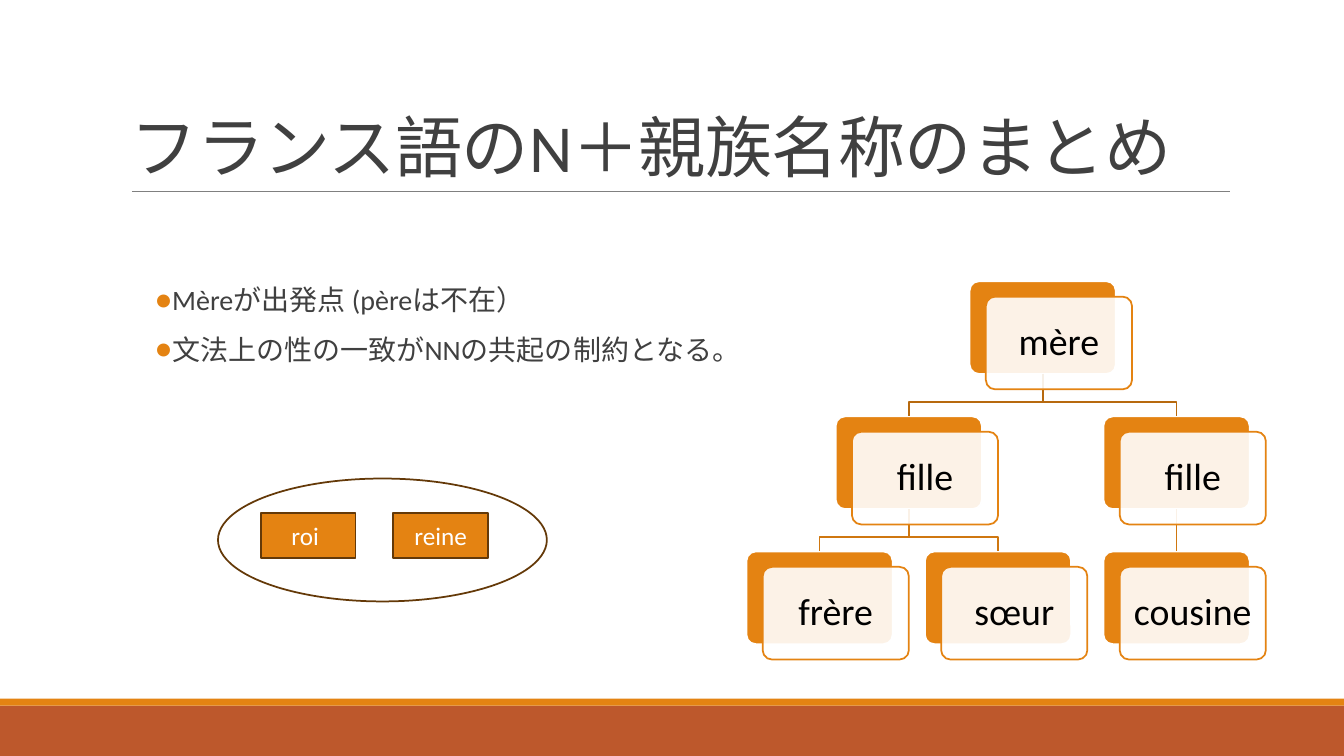
from dataclasses import dataclass

from lxml import etree
from pptx import Presentation
from pptx.dml.color import RGBColor
from pptx.enum.shapes import MSO_CONNECTOR, MSO_SHAPE
from pptx.enum.text import MSO_ANCHOR, PP_ALIGN
from pptx.oxml.ns import qn
from pptx.util import Pt

RECT, ROUND, OVAL = MSO_SHAPE.RECTANGLE, MSO_SHAPE.ROUNDED_RECTANGLE, MSO_SHAPE.OVAL
STRAIGHT = MSO_CONNECTOR.STRAIGHT
CENTER, LEFT = PP_ALIGN.CENTER, PP_ALIGN.LEFT
TOP, MIDDLE, BOTTOM = MSO_ANCHOR.TOP, MSO_ANCHOR.MIDDLE, MSO_ANCHOR.BOTTOM


@dataclass(frozen=True)
class Theme:
    font: str = "Calibri"
    orange: str = "E48312"
    rust: str = "BD582C"
    brown: str = "643908"
    upper: str = "B7690E"
    lower: str = "CF7710"
    ink: str = "404040"
    grey: str = "808080"
    black: str = "000000"
    white: str = "FFFFFF"
    title: float = 48
    body: float = 20
    node: float = 27
    label: float = 18
    line: float = 1.25


THEME = Theme()

# Family tree: name -> (text, column, row, parent)
TREE = {
    "root": ("mère", 1.25, 0, None),
    "left": ("fille", 0.5, 1, "root"),
    "right": ("fille", 2, 1, "root"),
    "brother": ("frère", 0, 2, "left"),
    "sister": ("sœur", 1, 2, "left"),
    "cousin": ("cousine", 2, 2, "right"),
}
TREE_X, TREE_Y = 533.2, 200.9
STEP_X, STEP_Y = 127.5, 96.5
NODE_W, NODE_H = 104.4, 66.2
SHIFT_X, SHIFT_Y = 11.6, 11
ELBOW = 20.2


def rgb(code):
    return RGBColor.from_string(code)


def add_box(slide, kind, x, y, w, h, fill=None, line=None):
    box = slide.shapes.add_shape(kind, Pt(x), Pt(y), Pt(w), Pt(h))
    box.shadow.inherit = False
    if fill:
        box.fill.solid()
        box.fill.fore_color.rgb = rgb(fill)
    else:
        box.fill.background()
    if line:
        box.line.color.rgb = rgb(line)
        box.line.width = Pt(THEME.line)
    else:
        box.line.fill.background()
    return box


def set_frame(shape, anchor, pad_x=7.2, pad_y=3.6):
    frame = shape.text_frame
    frame.word_wrap = True
    frame.vertical_anchor = anchor
    frame.margin_left = frame.margin_right = Pt(pad_x)
    frame.margin_top = frame.margin_bottom = Pt(pad_y)
    return frame


def add_run(para, text, size, color, align=LEFT, space=1.0):
    para.alignment = align
    para.line_spacing = space
    run = para.add_run()
    run.text = text
    run.font.name = THEME.font
    run.font.size = Pt(size)
    run.font.color.rgb = rgb(color)
    return run


def set_bullet(para):
    props = para._p.get_or_add_pPr()
    props.set("marL", str(Pt(7.2)))
    props.set("indent", str(-Pt(7.2)))
    color = etree.SubElement(props, qn("a:buClr"))
    etree.SubElement(color, qn("a:srgbClr"), val=THEME.orange)
    etree.SubElement(props, qn("a:buFont"), typeface=THEME.font)
    etree.SubElement(props, qn("a:buChar"), char="●")


def add_line(slide, x1, y1, x2, y2, color, width):
    line = slide.shapes.add_connector(STRAIGHT, Pt(x1), Pt(y1), Pt(x2), Pt(y2))
    line.line.color.rgb = rgb(color)
    line.line.width = Pt(width)
    etree.SubElement(line._element.spPr, qn("a:effectLst"))
    return line


def add_elbow(slide, x1, y1, x2, y2, color):
    bend = y1 + ELBOW
    path = slide.shapes.build_freeform(Pt(x1), Pt(y1), scale=1.0)
    path.add_line_segments(
        [(Pt(x1), Pt(bend)), (Pt(x2), Pt(bend)), (Pt(x2), Pt(y2))], close=False)
    link = path.convert_to_shape()
    link.shadow.inherit = False
    link.fill.background()
    link.line.color.rgb = rgb(color)
    link.line.width = Pt(THEME.line)


def add_card(slide, x, y, fill, line):
    card = add_box(slide, ROUND, x, y, NODE_W, NODE_H, fill, line)
    card.adjustments[0] = 0.1
    return card


def add_face(slide, x, y, text):
    card = add_card(slide, x + SHIFT_X, y + SHIFT_Y, THEME.white, THEME.orange)
    tint = card._element.spPr.find(qn("a:solidFill"))[0]
    etree.SubElement(tint, qn("a:alpha"), val="90000")
    frame = set_frame(card, MIDDLE, 8, 8)
    add_run(frame.paragraphs[0], text, THEME.node, THEME.black, CENTER, 0.9)


def add_tree(slide):
    spots = {name: (TREE_X + col * STEP_X, TREE_Y + row * STEP_Y)
             for name, (_, col, row, _) in TREE.items()}
    # Back plates, then links, then faces on top
    plates = {name: add_card(slide, x, y, THEME.orange, THEME.white)
              for name, (x, y) in spots.items()}
    for name, (_, _, row, parent) in TREE.items():
        if parent is None:
            continue
        x1, y1 = spots[parent]
        x2, y2 = spots[name]
        ends = (x1 + NODE_W / 2, y1 + NODE_H, x2 + NODE_W / 2, y2)
        color = THEME.upper if row == 1 else THEME.lower
        if x1 == x2:
            link = add_line(slide, *ends, color, THEME.line)
            link.begin_connect(plates[parent], 2)
            link.end_connect(plates[name], 0)
        else:
            add_elbow(slide, *ends, color)
    for name, (x, y) in spots.items():
        add_face(slide, x, y, TREE[name][0])


def add_title(slide, text):
    box = slide.shapes.add_textbox(Pt(86.4), Pt(22.3), Pt(792), Pt(114.5))
    frame = set_frame(box, BOTTOM)
    run = add_run(frame.paragraphs[0], text, THEME.title, THEME.ink, space=0.85)
    run.font._element.set("spc", "-50")


def add_points(slide, points):
    box = slide.shapes.add_textbox(Pt(110.9), Pt(200.9), Pt(792), Pt(316.8))
    frame = set_frame(box, TOP, 0)
    for i, text in enumerate(points):
        para = frame.add_paragraph() if i else frame.paragraphs[0]
        add_run(para, text, THEME.body, THEME.ink, space=0.9)
        para.space_before, para.space_after = Pt(12), Pt(2)
        set_bullet(para)


def add_pair(slide):
    for i, text in enumerate(("roi ", "reine")):
        box = add_box(slide, RECT, 186.2 + i * 94.8, 366.3, 67.7, 32.4,
                      THEME.orange, THEME.brown)
        frame = set_frame(box, MIDDLE)
        add_run(frame.paragraphs[0], text, THEME.label, THEME.white, CENTER)
    add_box(slide, OVAL, 155.7, 341.8, 234.9, 87.8, line=THEME.brown)


def main():
    deck = Presentation()
    deck.slide_width, deck.slide_height = Pt(960), Pt(540)
    slide = deck.slides.add_slide(deck.slide_layouts[6])

    # Footer bands and title rule
    add_box(slide, RECT, 0, 504, 960, 36, THEME.rust)
    add_box(slide, RECT, 0, 499, 960, 5, THEME.orange)
    add_line(slide, 94.3, 136.8, 878.8, 136.8, THEME.grey, 0.5)

    # Text
    add_title(slide, "フランス語のN＋親族名称のまとめ")
    add_points(slide, ("Mèreが出発点 (pèreは不在）",
                       "文法上の性の一致がNNの共起の制約となる。"))

    # Diagrams
    add_tree(slide)
    add_pair(slide)
    deck.save("out.pptx")


if __name__ == "__main__":
    main()
